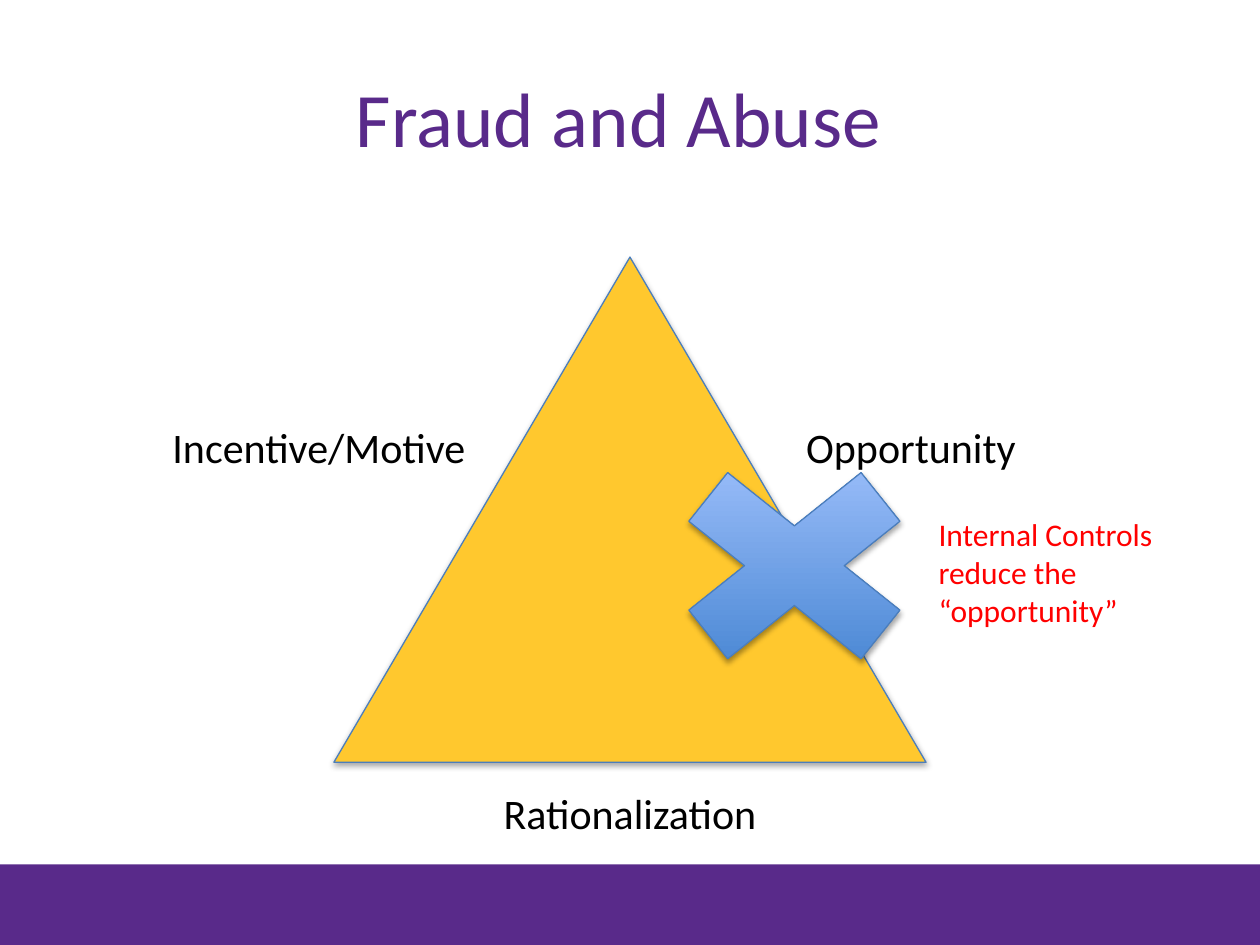
import dataclasses

import lxml.etree
import pptx
import pptx.dml.color
import pptx.enum.shapes
import pptx.enum.text
import pptx.oxml.ns
import pptx.util
from pptx.util import Inches

SHAPE = pptx.enum.shapes.MSO_SHAPE
ALIGN = pptx.enum.text.PP_ALIGN
ANCHOR = pptx.enum.text.MSO_ANCHOR


@dataclasses.dataclass(frozen=True)
class Theme:
    font: str = "Calibri"
    purple: str = "592A8A"
    gold: str = "FFC82E"
    outline: str = "4B7EBC"
    cross_bottom: str = "3F80CE"
    cross_top: str = "A4C4FF"
    shadow: str = "000000"
    text: str = "000000"
    alert: str = "FF0000"
    title_size: int = 44
    label_size: int = 24
    note_size: int = 18
    outline_width: float = 0.75


THEME = Theme()


def rgb(color):
    return pptx.dml.color.RGBColor.from_string(color)


def write(frame, text, size=THEME.label_size, color=THEME.text,
          align=ALIGN.LEFT, anchor=ANCHOR.TOP):
    frame.word_wrap = True
    frame.vertical_anchor = anchor
    paragraph = frame.paragraphs[0]
    paragraph.alignment = align
    run = paragraph.add_run()
    run.text = text
    run.font.name = THEME.font
    run.font.size = pptx.util.Pt(size)
    run.font.color.rgb = rgb(color)


def add_label(slide, box, text, **style):
    frame = slide.shapes.add_textbox(*map(Inches, box)).text_frame
    write(frame, text, **style)
    frame.auto_size = pptx.enum.text.MSO_AUTO_SIZE.SHAPE_TO_FIT_TEXT


def add_raised_shape(slide, kind, box):
    shape = slide.shapes.add_shape(kind, *map(Inches, box))
    shape.line.color.rgb = rgb(THEME.outline)
    shape.line.width = pptx.util.Pt(THEME.outline_width)
    shape.shadow.inherit = False
    qn = pptx.oxml.ns.qn
    effects = shape.element.spPr.find(qn("a:effectLst"))
    shadow = lxml.etree.SubElement(
        effects, qn("a:outerShdw"), blurRad="40000", dist="23000",
        dir="5400000", rotWithShape="0")
    tone = lxml.etree.SubElement(shadow, qn("a:srgbClr"), val=THEME.shadow)
    lxml.etree.SubElement(tone, qn("a:alpha"), val="35000")
    return shape


def add_footer_band(slide, box):
    band = slide.shapes.add_shape(SHAPE.RECTANGLE, *map(Inches, box))
    band.shadow.inherit = False
    band.fill.solid()
    band.fill.fore_color.rgb = rgb(THEME.purple)
    band.line.fill.background()


def place_title(slide, box, text):
    title = slide.shapes.title
    title.left, title.top, title.width, title.height = map(Inches, box)
    title.text_frame.margin_left = Inches(0.92)
    write(title.text_frame, text, size=THEME.title_size, color=THEME.purple,
          align=ALIGN.CENTER, anchor=ANCHOR.MIDDLE)


def add_fraud_triangle(slide, box):
    left, top, width, height = box
    triangle = add_raised_shape(slide, SHAPE.ISOSCELES_TRIANGLE, box)
    triangle.fill.solid()
    triangle.fill.fore_color.rgb = rgb(THEME.gold)
    side_top = top + 1.26
    add_label(slide, (left - 1.38, side_top, 2.75, 0.5), "Incentive/Motive")
    add_label(slide, (left + 3.65, side_top, 3.17, 0.5), "Opportunity")
    base_width = 3.81
    add_label(slide, (left + (width - base_width) / 2, top + height + 0.15,
                      base_width, 0.5),
              "Rationalization", align=ALIGN.CENTER)


def add_controls(slide, box):
    left, top, width, height = box
    cross = add_raised_shape(slide, SHAPE.MATH_MULTIPLY, box)
    cross.fill.gradient()
    cross.fill.gradient_angle = 90
    for stop, color in zip(cross.fill.gradient_stops,
                           (THEME.cross_bottom, THEME.cross_top)):
        stop.color.rgb = rgb(color)
    add_label(slide, (left + 2.36, top + 0.6, 2.15, 1.01),
              "Internal Controls reduce the “opportunity”",
              size=THEME.note_size, color=THEME.alert)


def main():
    deck = pptx.Presentation()
    deck.slide_width, deck.slide_height = Inches(10), Inches(7.5)
    slide = deck.slides.add_slide(deck.slide_layouts[5])
    add_footer_band(slide, (0, 6.86, 10, 0.64))
    place_title(slide, (0, 0.3, 9, 1.25), "Fraud and Abuse")
    add_fraud_triangle(slide, (2.65, 2.04, 4.7, 4.01))
    add_controls(slide, (4.99, 3.44, 2.63, 2.1))
    deck.save("out.pptx")


if __name__ == "__main__":
    main()
